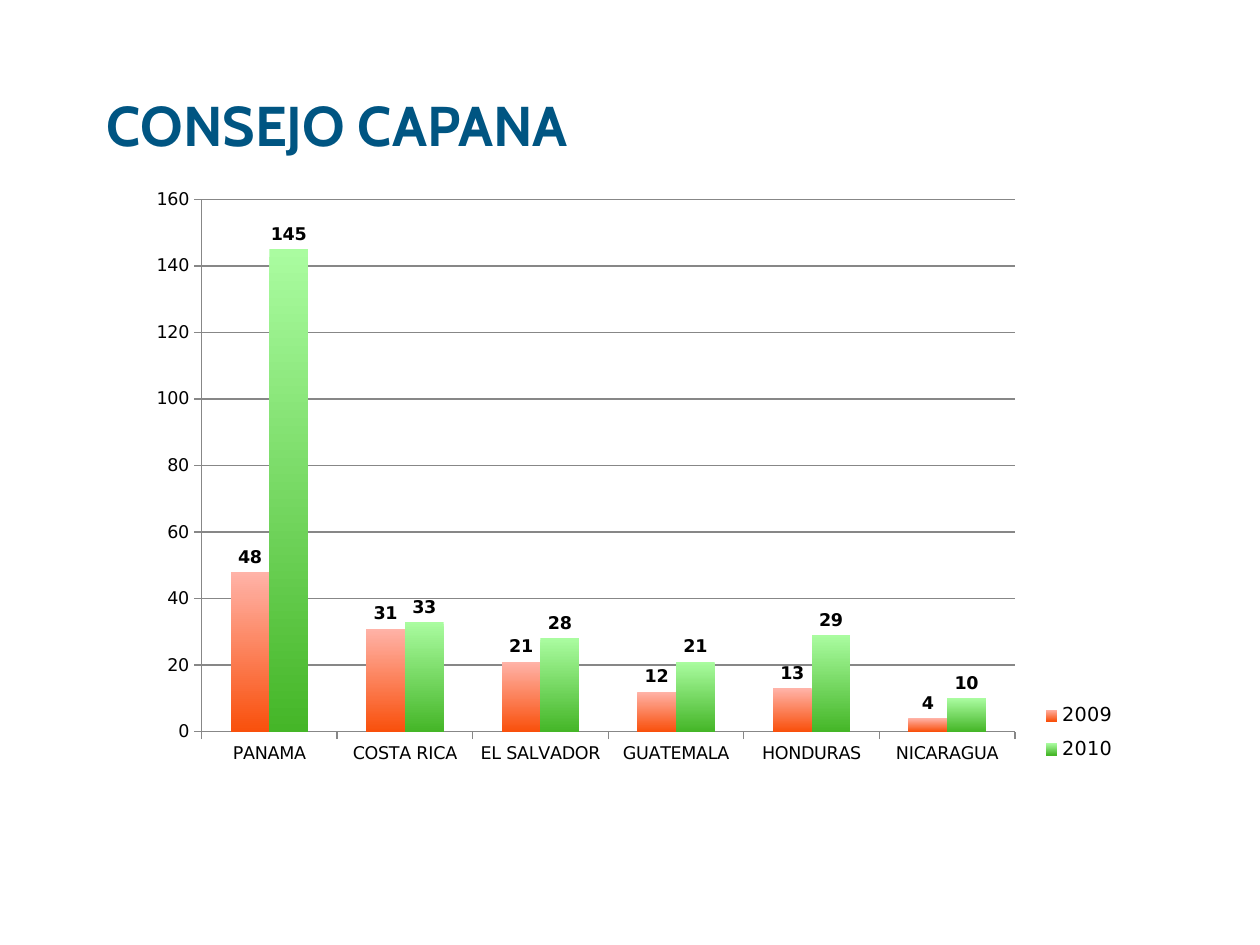
"""Build the CONSEJO CAPANA slide comparing 2009 and 2010 by country."""
import dataclasses
from typing import Any

import pptx
import pptx.chart.chart
import pptx.chart.data
import pptx.dml.color
import pptx.enum.chart
import pptx.enum.text
import pptx.oxml
import pptx.oxml.ns
import pptx.slide
import pptx.util

COUNTRIES = ["PANAMA", "COSTA RICA", "EL SALVADOR", "GUATEMALA", "HONDURAS", "NICARAGUA"]
GRID_COLOR = "878787"


@dataclasses.dataclass(frozen=True)
class Year:
    """One year of results with its gradient colours."""

    name: str
    totals: tuple[int, ...]
    top: str
    bottom: str


@dataclasses.dataclass(frozen=True)
class Area:
    """A region of the chart as fractions of its size."""

    x: float
    y: float
    w: float
    h: float


YEARS = [
    Year("2009", (48, 31, 21, 12, 13, 4), "FFB3A8", "F9500C"),
    Year("2010", (145, 33, 28, 21, 29, 10), "AAFCA0", "45B628"),
]
PLOT_AREA = Area(0.066, 0.035, 0.824, 0.889)
LEGEND_AREA = Area(0.91, 0.86, 0.09, 0.13)


def color(value: str) -> pptx.dml.color.RGBColor:
    """Turn a hex string into a colour."""
    return pptx.dml.color.RGBColor.from_string(value)


def apply_format(target: Any, values: dict[str, Any]) -> None:
    """Set every attribute in the dict on the target."""
    for name, value in values.items():
        setattr(target, name, value)


def format_font(font: Any, size: float, face: str, hex_color: str, bold: bool) -> None:
    """Format a font."""
    apply_format(font, {"size": pptx.util.Pt(size), "name": face, "bold": bold})
    font.color.rgb = color(hex_color)


def manual_layout(area: Area, inner: bool) -> Any:
    """Make a chart layout element for an area."""
    target = '<c:layoutTarget val="inner"/>' if inner else ""
    modes = '<c:xMode val="edge"/><c:yMode val="edge"/>'
    sizes = "".join(f'<c:{key} val="{value}"/>' for key, value in dataclasses.asdict(area).items())
    return pptx.oxml.parse_xml(
        f"<c:layout {pptx.oxml.ns.nsdecls('c')}><c:manualLayout>"
        f"{target}{modes}{sizes}</c:manualLayout></c:layout>"
    )


def place_areas(chart: pptx.chart.chart.Chart) -> None:
    """Fix the plot area and the legend in place."""
    qn = pptx.oxml.ns.qn
    plot_area = next(chart.element.iter(qn("c:plotArea")))
    legend = next(chart.element.iter(qn("c:legend")))
    for part in (plot_area, legend):
        for layout in part.findall(qn("c:layout")):
            part.remove(layout)
    plot_area.insert(0, manual_layout(PLOT_AREA, True))
    legend.find(qn("c:legendPos")).addnext(manual_layout(LEGEND_AREA, False))


def format_axes(chart: pptx.chart.chart.Chart) -> None:
    """Format both axes and the gridlines."""
    outside = pptx.enum.chart.XL_TICK_MARK.OUTSIDE
    none = pptx.enum.chart.XL_TICK_MARK.NONE
    apply_format(chart.value_axis, {
        "minimum_scale": 0, "maximum_scale": 160, "major_unit": 20,
        "has_major_gridlines": True,
    })
    for axis in (chart.category_axis, chart.value_axis):
        apply_format(axis, {"major_tick_mark": outside, "minor_tick_mark": none})
        format_font(axis.tick_labels.font, 10, "DejaVu Sans", "000000", False)
    for lined in (chart.category_axis, chart.value_axis, chart.value_axis.major_gridlines):
        lined.format.line.color.rgb = color(GRID_COLOR)
        lined.format.line.width = pptx.util.Pt(0.75)


def format_columns(series: Any, year: Year) -> None:
    """Give a year's columns their gradient and labels."""
    fill = series.format.fill
    fill.gradient()
    fill.gradient_angle = 270
    for stop, shade in zip(fill.gradient_stops, (year.top, year.bottom)):
        stop.color.rgb = color(shade)
    series.invert_if_negative = False
    apply_format(series.data_labels, {
        "show_value": True,
        "position": pptx.enum.chart.XL_LABEL_POSITION.OUTSIDE_END,
    })
    format_font(series.data_labels.font, 10, "DejaVu Sans", "000000", True)


def add_title(slide: pptx.slide.Slide) -> None:
    """Place and format the slide title."""
    title = slide.shapes.title
    apply_format(title, {
        "left": pptx.util.Cm(1.9), "top": pptx.util.Cm(1.7),
        "width": pptx.util.Cm(21.6), "height": pptx.util.Cm(3.18),
    })
    title.text_frame.text = "CONSEJO CAPANA"
    title.text_frame.vertical_anchor = pptx.enum.text.MSO_ANCHOR.TOP
    heading = title.text_frame.paragraphs[0]
    heading.alignment = pptx.enum.text.PP_ALIGN.LEFT
    format_font(heading.runs[0].font, 32, "Cabin", "005582", True)


def add_results(slide: pptx.slide.Slide) -> None:
    """Add the column chart of results by country."""
    results = pptx.chart.data.CategoryChartData()
    results.categories = COUNTRIES
    for year in YEARS:
        results.add_series(year.name, year.totals)
    chart = slide.shapes.add_chart(
        pptx.enum.chart.XL_CHART_TYPE.COLUMN_CLUSTERED,
        pptx.util.Cm(2.75), pptx.util.Cm(3.6), pptx.util.Cm(19.9), pptx.util.Cm(12.07),
        results,
    ).chart
    apply_format(chart, {"has_title": False, "has_legend": True})
    format_font(chart.font, 10, "DejaVu Sans", "000000", False)
    apply_format(chart.plots[0], {"gap_width": 150, "overlap": 0, "vary_by_categories": False})
    apply_format(chart.legend, {
        "position": pptx.enum.chart.XL_LEGEND_POSITION.RIGHT, "include_in_layout": False,
    })
    format_font(chart.legend.font, 11, "DejaVu Sans", "000000", False)
    format_axes(chart)
    for series, year in zip(chart.plots[0].series, YEARS):
        format_columns(series, year)
    place_areas(chart)


def main() -> None:
    """Build and save the presentation."""
    presentation = pptx.Presentation()
    apply_format(presentation, {
        "slide_width": pptx.util.Cm(25.4), "slide_height": pptx.util.Cm(19.05),
    })
    slide = presentation.slides.add_slide(presentation.slide_layouts[5])
    add_title(slide)
    add_results(slide)
    presentation.save("out.pptx")


if __name__ == "__main__":
    main()
